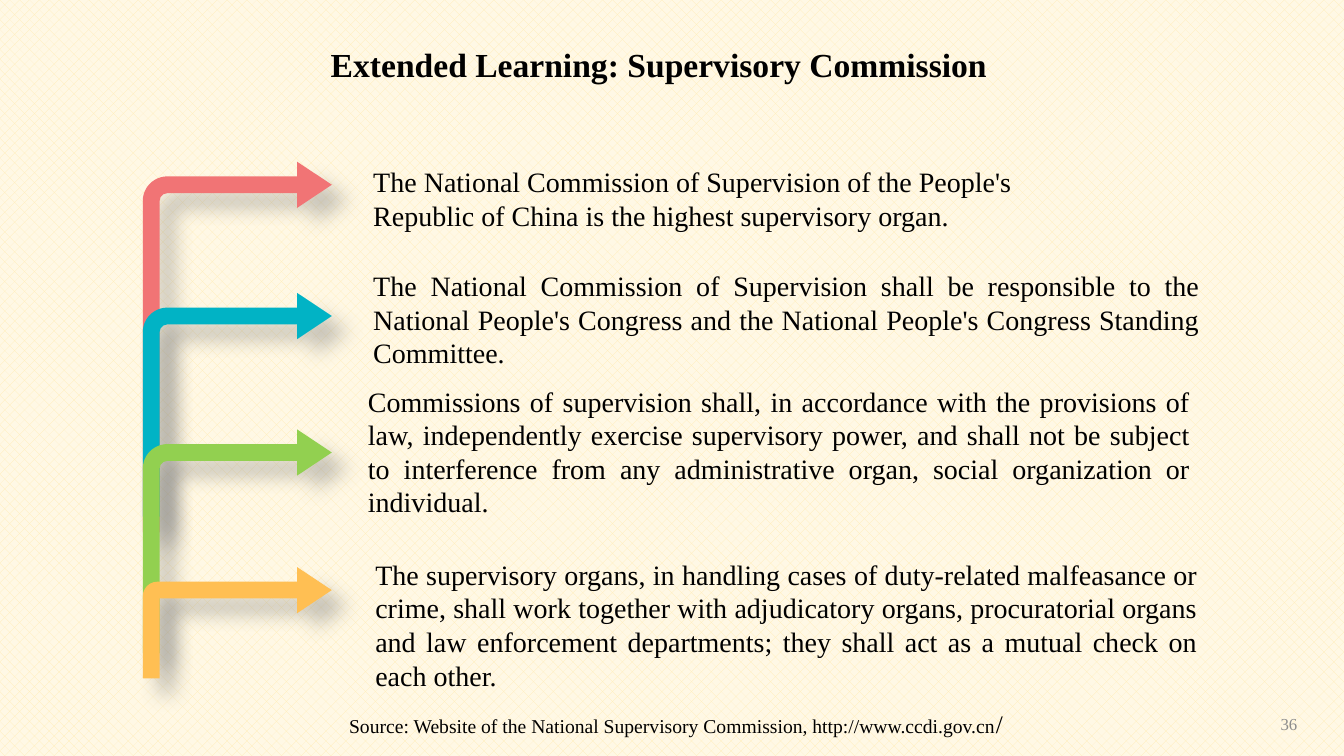
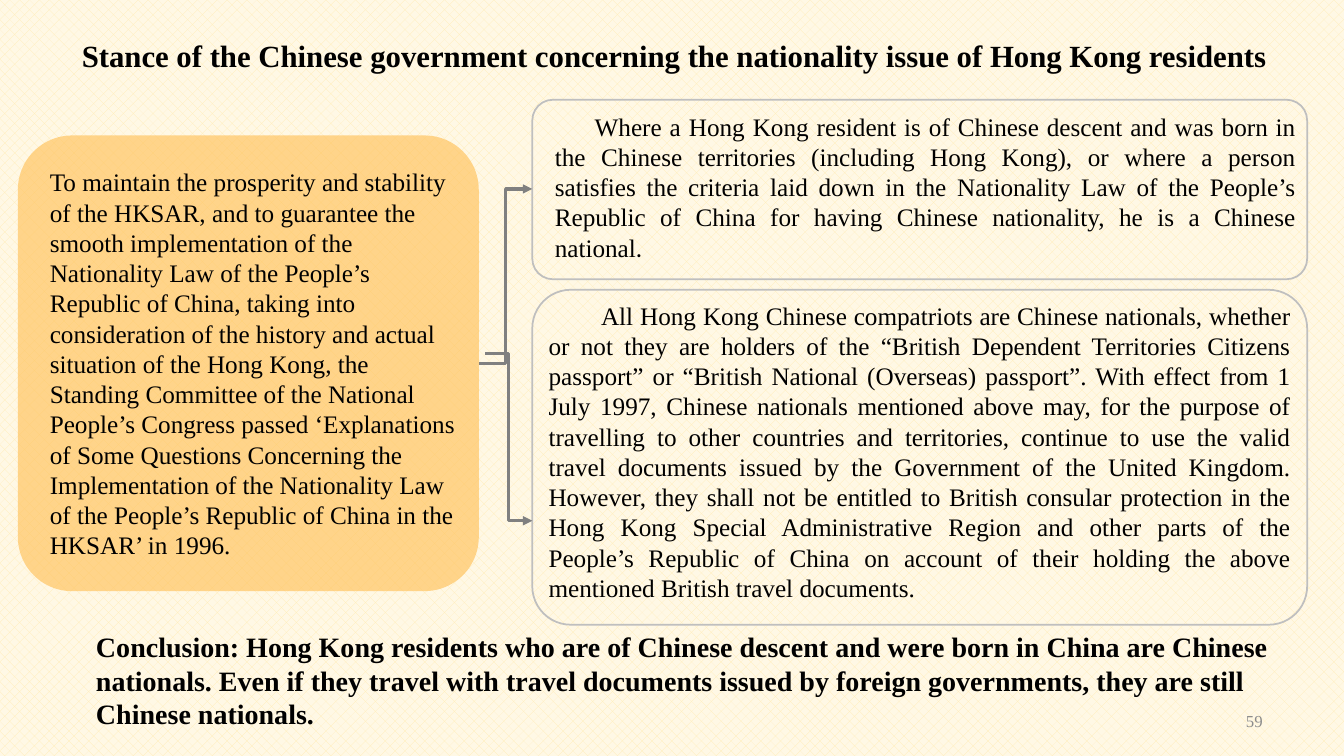
from dataclasses import dataclass, replace

from lxml.etree import SubElement
from pptx import Presentation
from pptx.dml.color import RGBColor as Color
from pptx.enum.dml import MSO_PATTERN as Pattern
from pptx.enum.shapes import MSO_CONNECTOR as Connector, MSO_SHAPE as Shape
from pptx.enum.text import MSO_ANCHOR as Anchor, PP_ALIGN as Align
from pptx.oxml.ns import qn
from pptx.util import Emu, Pt

# Shared scale and theme
EMU_PER_PX = 9525
WIDTH, HEIGHT = 1280, 720


@dataclass(frozen=True)
class Theme:
    paper: str = "FFFFFF"
    pattern: str = "FFE699"
    veil: str = "FFF2CC"
    coral: str = "F17475"
    teal: str = "01B3C5"
    green: str = "92D050"
    amber: str = "FFBF53"
    outline: str = "BFBFBF"
    line: str = "808080"
    ink: str = "000000"
    muted: str = "8C8C8C"
    serif: str = "Times New Roman"
    sans: str = "Calibri"
    title: int = 24
    long_title: int = 22
    point: int = 20
    body: int = 18
    source: int = 14
    number: int = 12


THEME = Theme()


@dataclass(frozen=True)
class Style:
    size: int
    bold: bool = False
    color: str = THEME.ink
    font: str = THEME.serif


POINT = Style(THEME.point)
BODY = Style(THEME.body)


def px(value):
    return Emu(round(value * EMU_PER_PX))


def rgb(value):
    return Color.from_string(value)


# Text
def add_text(page, at, *runs, align=Align.LEFT, indent=0, spacing=None,
             anchor=Anchor.TOP, wrap=True):
    """Add one paragraph made of (text, style) runs."""
    box = page.shapes.add_textbox(*map(px, at))
    frame = box.text_frame
    frame.word_wrap = wrap
    frame.vertical_anchor = anchor
    para = frame.paragraphs[0]
    para.alignment = align
    if indent:
        para._p.get_or_add_pPr().set("indent", str(px(indent)))
    if spacing:
        para.line_spacing = spacing
    for text, style in runs:
        span = para.add_run()
        span.text = text
        span.font.name = style.font
        span.font.size = Pt(style.size)
        span.font.bold = style.bold
        span.font.color.rgb = rgb(style.color)


def add_title(page, at, text, size):
    add_text(page, at, (text, Style(size, bold=True)),
             align=Align.CENTER, wrap=False)


def add_number(page, left, top, number):
    add_text(page, (left, top, 288, 38),
             (number, Style(THEME.number, color=THEME.muted)),
             align=Align.RIGHT, anchor=Anchor.MIDDLE)


# Shapes
def add_shape(page, kind, at, fill=None, opacity=100, outline=None):
    shape = page.shapes.add_shape(kind, *map(px, at))
    shape.shadow.inherit = False
    if fill:
        shape.fill.solid()
        shape.fill.fore_color.rgb = rgb(fill)
        if opacity < 100:
            color = shape.element.spPr.find(qn("a:solidFill"))[0]
            SubElement(color, qn("a:alpha"), val=str(opacity * 1000))
    else:
        shape.fill.background()
    if outline:
        shape.line.color.rgb = rgb(outline)
        shape.line.width = Pt(1.25)
    else:
        shape.line.fill.background()
    return shape


def add_panel(page, at, corner, **look):
    panel = add_shape(page, Shape.ROUNDED_RECTANGLE, at, **look)
    panel.adjustments[0] = corner


def add_shadow(shape):
    effects = shape.element.spPr.find(qn("a:effectLst"))
    shadow = SubElement(effects, qn("a:outerShdw"), blurRad=str(Pt(14)),
                        dist=str(Pt(16)), dir=str(45 * 60000),
                        algn="tl", rotWithShape="0")
    color = SubElement(shadow, qn("a:srgbClr"), val=THEME.line)
    SubElement(color, qn("a:alpha"), val="43000")


def add_bent_arrow(page, top, height, fill):
    width, shaft, half_head, head = 180, 16, 22, 33
    arrow = add_shape(page, Shape.BENT_ARROW, (136, top, width, height), fill)
    short = min(width, height)
    for index, length in enumerate((shaft, half_head, head)):
        arrow.adjustments[index] = length / short
    arrow.adjustments[3] = 0.13
    add_shadow(arrow)


def add_elbow(page, start, end):
    elbow = page.shapes.add_connector(Connector.ELBOW, *map(px, start + end))
    elbow.line.color.rgb = rgb(THEME.line)
    elbow.line.width = Pt(2.25)
    properties = elbow.element.spPr
    SubElement(properties.find(qn("a:ln")), qn("a:tailEnd"), type="triangle")
    SubElement(properties, qn("a:effectLst"))


# Pages
def add_page(deck):
    page = deck.slides.add_slide(deck.slide_layouts[6])
    fill = page.background.fill
    fill.patterned()
    fill.pattern = Pattern.PERCENT_30
    fill.fore_color.rgb = rgb(THEME.pattern)
    fill.back_color.rgb = rgb(THEME.paper)
    add_shape(page, Shape.RECTANGLE, (0, 0, WIDTH, HEIGHT), THEME.veil, 50)
    return page


def build_commission(deck):
    page = add_page(deck)
    add_title(page, (302, 37, 651, 48),
              "Extended Learning: Supervisory Commission", THEME.title)

    # Stacked arrows
    for top, height, fill in (
        (154, 353, THEME.coral),
        (279, 213, THEME.teal),
        (409, 213, THEME.green),
        (540, 106, THEME.amber),
    ):
        add_bent_arrow(page, top, height, fill)

    # One point beside each arrow
    for at, align, text in (
        ((346, 152, 730, 74), Align.LEFT,
         "The National Commission of Supervision of the People's Republic of "
         "China is the highest supervisory organ."),
        ((346, 251, 806, 99), Align.JUSTIFY,
         "The National Commission of Supervision shall be responsible to the "
         "National People's Congress and the National People's Congress "
         "Standing Committee."),
        ((341, 361, 802, 133), Align.JUSTIFY,
         "Commissions of supervision shall, in accordance with the provisions "
         "of law, independently exercise supervisory power, and shall not be "
         "subject to interference from any administrative organ, social "
         "organization or individual."),
        ((348, 526, 802, 95), Align.JUSTIFY,
         "The supervisory organs, in handling cases of duty-related "
         "malfeasance or crime, shall work together with adjudicatory organs, "
         "procuratorial organs and law enforcement departments; they shall "
         "act as a mutual check on each other."),
    ):
        add_text(page, at, (text, POINT), align=align)

    # Footer
    add_text(page, (323, 655, 889, 54),
             ("Source: Website of the National Supervisory Commission, "
              "http://www.ccdi.gov.cn", Style(THEME.source)),
             ("/", BODY), spacing=1.5)
    add_number(page, 957, 670, "36")


def build_nationality(deck):
    page = add_page(deck)
    add_title(page, (61, 30, 1162, 45),
              "Stance of the Chinese government concerning the nationality "
              "issue of Hong Kong residents", THEME.long_title)

    # Panels
    for top, height in ((95, 171), (276, 319)):
        add_panel(page, (507, top, 738, height), 0.115, outline=THEME.outline)
    add_panel(page, (17, 129, 439, 434), 0.119, fill=THEME.amber, opacity=62)

    # Panel text
    add_text(page, (519, 101, 725, 197),
             ("Where a Hong Kong resident is of Chinese descent and was born "
              "in the Chinese territories (including Hong Kong), or where a "
              "person satisfies the criteria laid down in the Nationality Law "
              "of the People’s Republic of China for having Chinese "
              "nationality, he is a Chinese national", BODY),
             (".", replace(BODY, font=THEME.sans)),
             align=Align.JUSTIFY, indent=38)
    add_text(page, (513, 281, 726, 329),
             ("All Hong Kong Chinese compatriots are Chinese nationals, "
              "whether or not they are holders of the “British Dependent "
              "Territories Citizens passport” or “British National (Overseas) "
              "passport”. With effect from 1 July 1997, Chinese nationals "
              "mentioned above may, for the purpose of travelling to other "
              "countries and territories, continue to use the valid travel "
              "documents issued by the Government of the United Kingdom. "
              "However, they shall not be entitled to British consular "
              "protection in the Hong Kong Special Administrative Region and "
              "other parts of the People’s Republic of China on account of "
              "their holding the above mentioned British travel documents.",
              BODY),
             align=Align.JUSTIFY, indent=50)
    add_text(page, (38, 154, 408, 417),
             ("To maintain the prosperity and stability of the HKSAR, and to "
              "guarantee the smooth implementation of the Nationality Law of "
              "the People’s Republic of China, taking into consideration of "
              "the history and actual situation of the Hong Kong, the "
              "Standing Committee of the National People’s Congress passed "
              "‘Explanations of Some Questions Concerning the Implementation "
              "of the Nationality Law of the People’s Republic of China in "
              "the HKSAR’ in 1996.", BODY))

    # Arrows between panels
    add_elbow(page, (456, 346), (507, 180))
    add_elbow(page, (462, 337), (507, 496))

    # Conclusion and footer
    add_text(page, (82, 595, 1139, 107),
             ("Conclusion: Hong Kong residents who are of Chinese descent and "
              "were born in China are Chinese nationals. Even if they travel "
              "with travel documents issued by foreign governments, they are "
              "still Chinese nationals.", replace(POINT, bold=True)))
    add_number(page, 924, 667, "59")


def main():
    deck = Presentation()
    deck.slide_width, deck.slide_height = px(WIDTH), px(HEIGHT)
    build_commission(deck)
    build_nationality(deck)
    deck.save("out.pptx")


if __name__ == "__main__":
    main()
